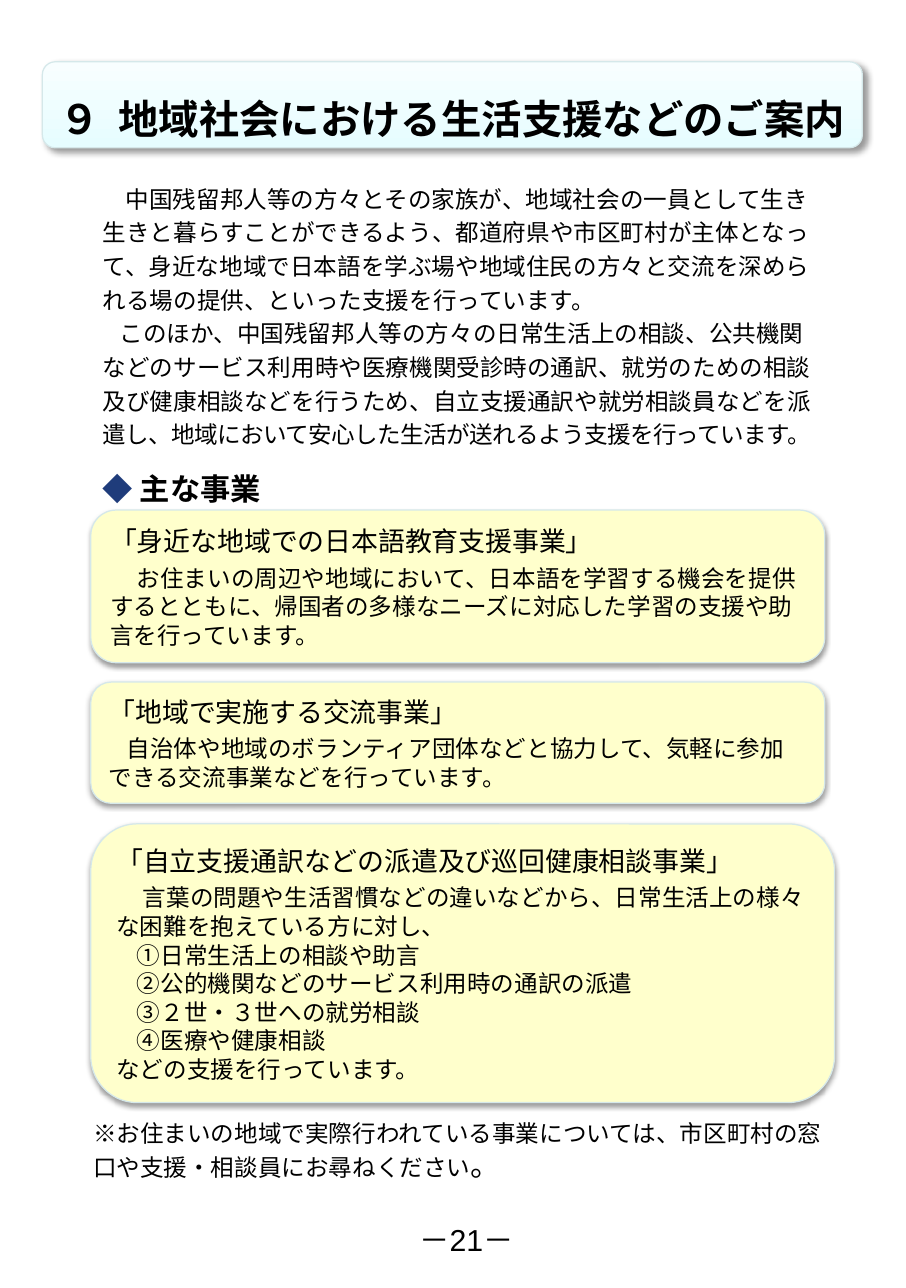
from lxml.etree import SubElement
from pptx import Presentation
from pptx.dml.color import RGBColor
from pptx.enum.shapes import MSO_SHAPE
from pptx.enum.text import MSO_ANCHOR, MSO_AUTO_SIZE, PP_ALIGN
from pptx.oxml.ns import qn
from pptx.util import Inches, Pt

COLORS = {
    "text": "000000",
    "banner_bottom": "E6FDFF",
    "banner_top": "F8FEFF",
    "panel": "FFFFCC",
    "border": "D5E8EA",
    "diamond": "1F3C7B",
    "shadow": "000000",
}
JAPANESE_FONT = "Noto Sans CJK JP"


def format_paragraph(paragraph, size, line_height=None, indent=0, font_name=JAPANESE_FONT):
    paragraph.font.size = Pt(size)
    paragraph.font.name = font_name
    paragraph.font.color.rgb = RGBColor.from_string(COLORS["text"])
    if line_height:
        paragraph.line_spacing = Pt(line_height)
    properties = paragraph._p.get_or_add_pPr()
    properties.set("marL", "0")
    properties.set("indent", str(Inches(indent)))
    SubElement(properties.find(qn("a:defRPr")), qn("a:ea"), typeface=JAPANESE_FONT)


def add_rounded_box(slide, box, blur, distance, angle, alpha):
    shape = slide.shapes.add_shape(MSO_SHAPE.ROUNDED_RECTANGLE, *map(Inches, box))
    shape.line.color.rgb = RGBColor.from_string(COLORS["border"])
    shape.line.width = Pt(0.75)
    shape.shadow.inherit = False
    effects = shape._element.spPr.find(qn("a:effectLst"))
    shadow = SubElement(effects, qn("a:outerShdw"), blurRad=str(Pt(blur)),
                        dist=str(Pt(distance)), dir=str(angle * 60000),
                        algn="t", rotWithShape="0")
    color = SubElement(shadow, qn("a:srgbClr"), val=COLORS["shadow"])
    SubElement(color, qn("a:alpha"), val=str(alpha * 1000))
    return shape


presentation = Presentation()
presentation.slide_width = Inches(7.48)
presentation.slide_height = Inches(10.63)
slide = presentation.slides.add_slide(presentation.slide_layouts[5])

banner = add_rounded_box(slide, (0.35, 0.51, 6.77, 0.71), 4, 3, 45, 40)
banner.adjustments[0] = 0.15
banner.fill.gradient()
banner.fill.gradient_angle = 90
for stop, name in zip(banner.fill.gradient_stops, ("banner_bottom", "banner_top")):
    stop.color.rgb = RGBColor.from_string(COLORS[name])

title = slide.shapes.title
title.left, title.top, title.width, title.height = map(Inches, (0.35, 0.74, 6.77, 0.48))
slide.shapes._spTree.append(title._element)
title_frame = title.text_frame
title_frame.text = "９  地域社会における生活支援などのご案内"
title_frame.auto_size = MSO_AUTO_SIZE.NONE
title_frame.word_wrap = False
title_frame.vertical_anchor = MSO_ANCHOR.MIDDLE
title_frame.margin_top = title_frame.margin_bottom = 0
title_paragraph = title_frame.paragraphs[0]
title_paragraph.alignment = PP_ALIGN.CENTER
format_paragraph(title_paragraph, 24)
title_paragraph.font.bold = True

introduction = slide.shapes.add_textbox(*map(Inches, (0.75, 1.43, 6.06, 2.32))).text_frame
introduction.word_wrap = True
purpose = introduction.paragraphs[0]
purpose.text = (
    "中国残留邦人等の方々とその家族が、地域社会の一員として生き生きと暮らすことができるよう、"
    "都道府県や市区町村が主体となって、身近な地域で日本語を学ぶ場や地域住民の方々と交流を"
    "深められる場の提供、といった支援を行っています。"
)
format_paragraph(purpose, 14, 20, 0.19)
services = introduction.add_paragraph()
services.text = (
    "このほか、中国残留邦人等の方々の日常生活上の相談、公共機関などのサービス利用時や"
    "医療機関受診時の通訳、就労のための相談及び健康相談などを行うため、"
    "自立支援通訳や就労相談員などを"
)
condensed = services.add_run()
condensed.text = "派遣し、地域において安心した生活が送れるよう支援を行っています。"
condensed._r.get_or_add_rPr().set("spc", "-40")
format_paragraph(services, 14, 20, 0.14)

heading_frame = slide.shapes.add_textbox(*map(Inches, (0.75, 3.83, 2.6, 0.4))).text_frame
heading_frame.word_wrap = True
heading = heading_frame.paragraphs[0]
diamond = heading.add_run()
diamond.text = "◆ "
diamond.font.name = "Arial"
diamond.font.color.rgb = RGBColor.from_string(COLORS["diamond"])
heading_name = heading.add_run()
heading_name.text = "主な事業"
heading_name.font.bold = True
format_paragraph(heading, 18, 22)

projects = [
    ((0.75, 4.21, 6.06, 1.26), "「身近な地域での日本語教育支援事業」", [
        ("お住まいの周辺や地域において、日本語を学習する機会を提供するとともに、"
         "帰国者の多様なニーズに対応した学習の支援や助言を行っています。", 0.22),
    ]),
    ((0.75, 5.63, 6.06, 1), "「地域で実施する交流事業」", [
        ("自治体や地域のボランティア団体などと協力して、気軽に参加できる"
         "交流事業などを行っています。", 0.15),
    ]),
    ((0.75, 6.8, 6.14, 2.3), "「自立支援通訳などの派遣及び巡回健康相談事業」", [
        ("言葉の問題や生活習慣などの違いなどから、日常生活上の様々な困難を"
         "抱えている方に対し、", 0.22),
        ("①日常生活上の相談や助言", 0.17),
        ("②公的機関などのサービス利用時の通訳の派遣", 0.17),
        ("③２世・３世への就労相談", 0.17),
        ("④医療や健康相談", 0.17),
        ("などの支援を行っています。", 0),
    ]),
]
for box, name, details in projects:
    panel = add_rounded_box(slide, box, 3.1, 1.6, 90, 38)
    panel.fill.solid()
    panel.fill.fore_color.rgb = RGBColor.from_string(COLORS["panel"])
    panel_frame = panel.text_frame
    panel_frame.word_wrap = True
    panel_frame.vertical_anchor = MSO_ANCHOR.MIDDLE
    project_name = panel_frame.paragraphs[0]
    project_name.text = name
    project_name.space_after = Pt(3.6)
    format_paragraph(project_name, 16, 20)
    for text, indent in details:
        detail = panel_frame.add_paragraph()
        detail.text = text
        format_paragraph(detail, 14, 17, indent)
    for paragraph in panel_frame.paragraphs:
        paragraph.alignment = PP_ALIGN.LEFT

note_frame = slide.shapes.add_textbox(*map(Inches, (0.67, 9.13, 6.26, 0.68))).text_frame
note_frame.word_wrap = True
note = note_frame.paragraphs[0]
note.text = (
    "※お住まいの地域で実際行われている事業については、"
    "市区町村の窓口や支援・相談員にお尋ねください"
)
full_stop = note.add_run()
full_stop.text = "。"
full_stop.font.size = Pt(18)
format_paragraph(note, 14, 21)

page_frame = slide.shapes.add_textbox(*map(Inches, (3.19, 10.03, 1.32, 0.4))).text_frame
page_frame.word_wrap = True
page_number = page_frame.paragraphs[0]
page_number.text = "－21－"
page_number.alignment = PP_ALIGN.CENTER
format_paragraph(page_number, 18, font_name="Arial")

presentation.save("out.pptx")
